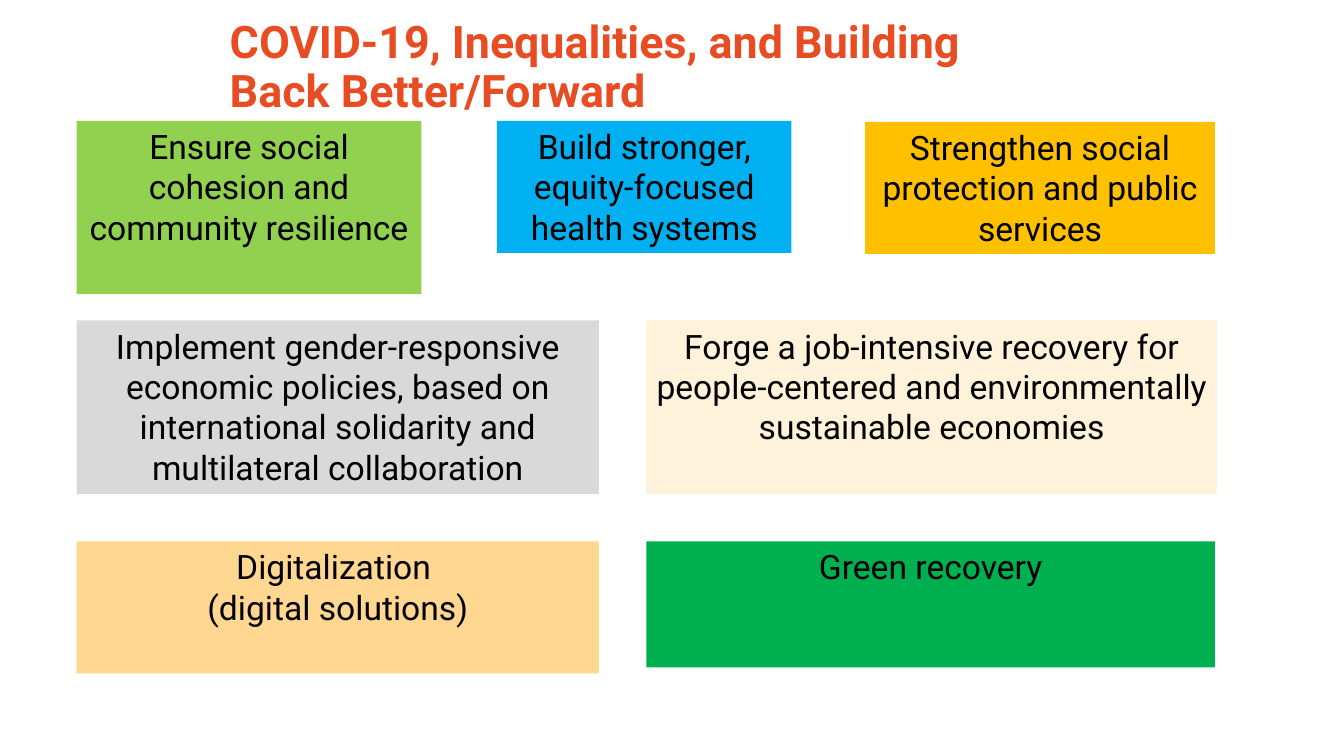
from pptx import Presentation
from pptx import util as u
from pptx.dml.color import RGBColor
from pptx.enum import shapes, text

ORANGE_RED = RGBColor(0xE8, 0x4C, 0x22)
BLACK = RGBColor(0x00, 0x00, 0x00)
LIME = RGBColor(0x92, 0xD0, 0x50)
SKY = RGBColor(0x00, 0xB0, 0xF0)
AMBER = RGBColor(0xFF, 0xC0, 0x00)
GREY = RGBColor(0xD9, 0xD9, 0xD9)
CREAM = RGBColor(0xFF, 0xF2, 0xDA)
PEACH = RGBColor(0xFF, 0xD7, 0x91)
GREEN = RGBColor(0x00, 0xB0, 0x50)

WIDTH, HEIGHT = u.Inches(13.33), u.Inches(7.5)
LEFT, RIGHT = 5.7, 48.09
TOP_ROW, MIDDLE_ROW, BOTTOM_ROW = 16, 42.4, 71.6
HALF = 38.86
THREE_LINES, FOUR_LINES = 17.47, 22.93

PRIORITIES = [
    (LEFT, TOP_ROW, 25.66, FOUR_LINES, LIME,
     ["Ensure social cohesion and community resilience"]),
    (36.98, TOP_ROW, 21.91, THREE_LINES, SKY,
     ["Build stronger, equity-focused health systems"]),
    (64.37, 16.13, 26.03, THREE_LINES, AMBER,
     ["Strengthen social protection and public services"]),
    (LEFT, MIDDLE_ROW, HALF, FOUR_LINES, GREY,
     ["Implement gender-responsive economic policies, based on "
      "international solidarity and multilateral collaboration"]),
    (RIGHT, MIDDLE_ROW, 42.46, FOUR_LINES, CREAM,
     ["Forge a job-intensive recovery for people-centered and "
      "environmentally sustainable economies"]),
    (LEFT, BOTTOM_ROW, HALF, THREE_LINES, PEACH,
     ["Digitalization ", "(digital solutions)"]),
    (RIGHT, BOTTOM_ROW, 42.31, 16.67, GREEN, ["Green recovery"]),
]


class RecoverySlide:
    """Draws the slide's parts, with places given in percent of its size."""

    heading_font = {"name": "Roboto", "size": u.Pt(32), "bold": True}
    body_font = {"name": "Roboto", "size": u.Pt(24), "bold": False}

    def __init__(self, deck):
        self.slide = deck.slides.add_slide(deck.slide_layouts[6])

    def place(self, left, top, width, height):
        return [round(share * side / 100) for share, side in
                zip((left, top, width, height), (WIDTH, HEIGHT) * 2)]

    def wording(self, frame, lines, font, colour, frame_format, line_format):
        for key, value in frame_format.items():
            setattr(frame, key, value)
        for index, line in enumerate(lines):
            paragraph = frame.add_paragraph() if index else frame.paragraphs[0]
            for key, value in line_format.items():
                setattr(paragraph, key, value)
            run = paragraph.add_run()
            run.text = line
            for key, value in font.items():
                setattr(run.font, key, value)
            run.font.color.rgb = colour

    def heading(self, place, title):
        heading = self.slide.shapes.add_textbox(*self.place(*place))
        self.wording(heading.text_frame, [title], self.heading_font, ORANGE_RED,
                     {"word_wrap": True, "vertical_anchor": text.MSO_ANCHOR.MIDDLE},
                     {"line_spacing": 0.9})

    def priority(self, place, fill, lines):
        panel = self.slide.shapes.add_shape(
            shapes.MSO_SHAPE.RECTANGLE, *self.place(*place))
        panel.shadow.inherit = False
        panel.fill.solid()
        panel.fill.fore_color.rgb = fill
        panel.line.fill.background()
        self.wording(panel.text_frame, lines, self.body_font, BLACK,
                     {"word_wrap": True, "vertical_anchor": text.MSO_ANCHOR.TOP,
                      "auto_size": text.MSO_AUTO_SIZE.SHAPE_TO_FIT_TEXT},
                     {"alignment": text.PP_ALIGN.CENTER})


def main():
    deck = Presentation()
    deck.slide_width, deck.slide_height = WIDTH, HEIGHT
    recovery = RecoverySlide(deck)
    recovery.heading((16.35, 1.2, 61.07, 15.73),
                     "COVID-19, Inequalities, and Building Back Better/Forward")
    for *place, fill, lines in PRIORITIES:
        recovery.priority(place, fill, lines)
    deck.save("out.pptx")


if __name__ == "__main__":
    main()
